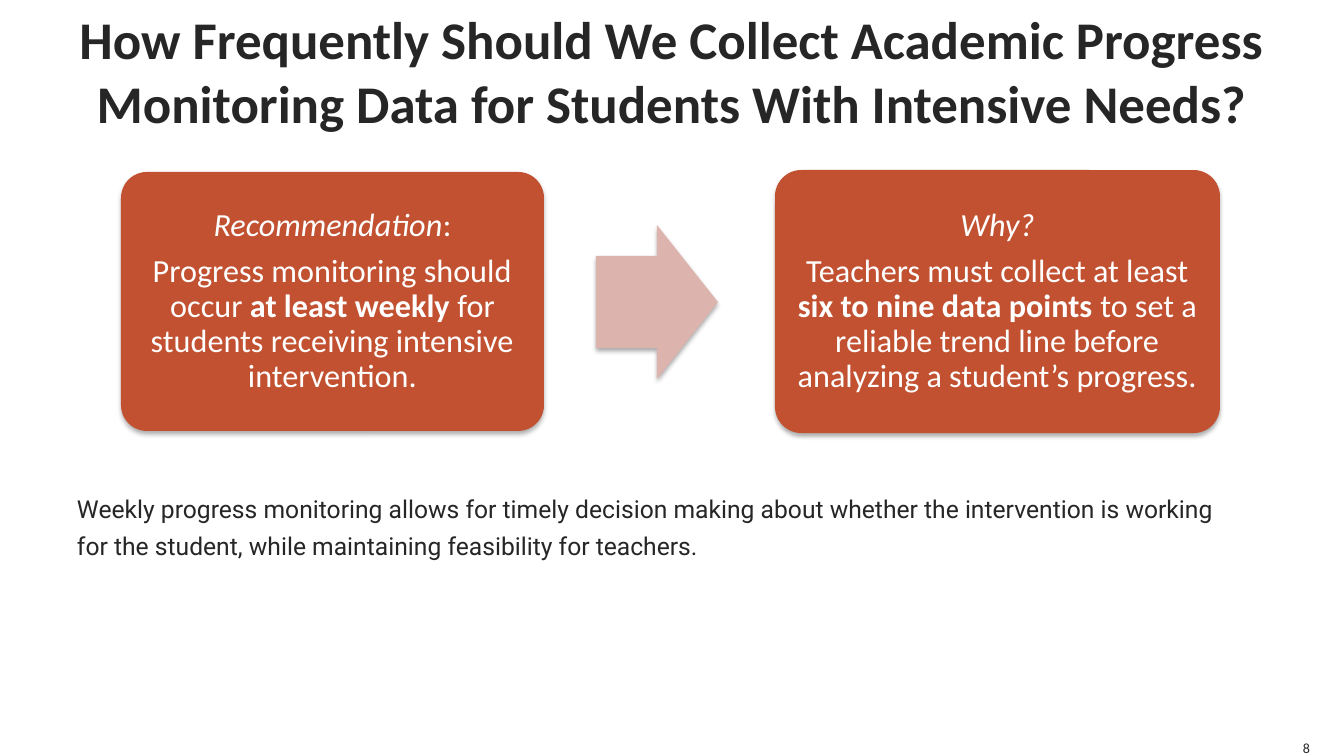
"""Build a slide on how often to collect academic progress monitoring data."""
from dataclasses import dataclass

from lxml import etree
from pptx import Presentation
from pptx.dml.color import RGBColor
from pptx.enum.shapes import MSO_SHAPE
from pptx.enum.text import MSO_ANCHOR, MSO_AUTO_SIZE, PP_ALIGN
from pptx.oxml.ns import qn
from pptx.util import Emu, Pt

LEFT, CENTER, RIGHT = PP_ALIGN.LEFT, PP_ALIGN.CENTER, PP_ALIGN.RIGHT
MIDDLE, BOTTOM = MSO_ANCHOR.MIDDLE, MSO_ANCHOR.BOTTOM
ROUNDED, ARROW = MSO_SHAPE.ROUNDED_RECTANGLE, MSO_SHAPE.RIGHT_ARROW

TITLE = ("How Frequently Should We Collect Academic Progress Monitoring Data "
         "for Students With Intensive Needs?")
SUMMARY = ("Weekly progress monitoring allows for timely decision making about whether "
           "the intervention is working for the student, while maintaining feasibility "
           "for teachers.")
PAGE_NUMBER = "8"
CARDS = [
    ((121, 172, 423, 259), [
        [("Recommendation", "i"), (":", "")],
        [("Progress monitoring should occur ", ""), ("at least weekly", "b"),
         (" for students receiving intensive intervention.", "")],
    ]),
    ((775, 170, 445, 263), [
        [("Why?", "i")],
        [("Teachers must collect at least", ""), ("\n", ""),
         ("six to nine data points ", "b"),
         ("to set a reliable trend line before analyzing a student’s progress.", "")],
    ]),
]
ARROW_BOX = (596, 225, 122, 154)
TITLE_BOX = (50, 0, 1243, 141)
SUMMARY_BOX = (77, 453, 1143, 141)
NUMBER_BOX = (1293, 739, 17, 17)
SLIDE_SIZE = (1344, 756)
CARD_INSET = 10
EMU_PER_PX = 914400 / 100.8


@dataclass(frozen=True)
class Theme:
    ink: str = "262626"
    card: str = "C25131"
    arrow: str = "DDB3AE"
    on_card: str = "FFFFFF"
    shadow: str = "000000"
    heading_font: str = "Calibri"
    body_font: str = "Roboto"
    title_size: float = 37.8
    card_size: float = 23
    summary_size: float = 17.6
    number_size: float = 10


THEME = Theme()


def px(length):
    return Emu(round(length * EMU_PER_PX))


def place(part, box):
    part.left, part.top, part.width, part.height = map(px, box)


def write(part, paragraphs, *, size, font=THEME.heading_font, color=THEME.ink,
          align=CENTER, anchor=MIDDLE, inset=0, spacing=1.0, after=0, bold=False):
    if isinstance(paragraphs, str):
        paragraphs = [[(paragraphs, "b" if bold else "")]]
    frame = part.text_frame
    frame.word_wrap = True
    frame.auto_size = MSO_AUTO_SIZE.NONE
    frame.vertical_anchor = anchor
    frame.margin_left = frame.margin_right = px(inset)
    frame.margin_top = frame.margin_bottom = px(inset)
    for index, runs in enumerate(paragraphs):
        paragraph = frame.add_paragraph() if index else frame.paragraphs[0]
        properties = paragraph._p.get_or_add_pPr()
        properties.set("marL", "0")
        properties.set("indent", "0")
        etree.SubElement(properties, qn("a:buNone"))
        paragraph.alignment = align
        paragraph.line_spacing = spacing
        paragraph.space_before = Pt(0)
        paragraph.space_after = Pt(after)
        for text, style in runs:
            if text == "\n":
                paragraph.add_line_break()
                continue
            run = paragraph.add_run()
            run.text = text
            run.font.name = font
            run.font.size = Pt(size)
            run.font.color.rgb = RGBColor.from_string(color)
            run.font.bold = style == "b"
            run.font.italic = style == "i"


def add_raised(slide, preset, box, fill, adjustments):
    part = slide.shapes.add_shape(preset, *map(px, box))
    for index, value in enumerate(adjustments):
        part.adjustments[index] = value
    part.fill.solid()
    part.fill.fore_color.rgb = RGBColor.from_string(fill)
    part.line.fill.background()
    part.shadow.inherit = False
    effects = part._element.spPr.find(qn("a:effectLst"))
    shadow = etree.SubElement(effects, qn("a:outerShdw"), blurRad=str(Pt(3.5)),
                              dist=str(Pt(2.2)), dir="5400000", rotWithShape="0")
    tint = etree.SubElement(shadow, qn("a:srgbClr"), val=THEME.shadow)
    etree.SubElement(tint, qn("a:alpha"), val="32000")
    return part


def main():
    deck = Presentation()
    deck.slide_width, deck.slide_height = map(px, SLIDE_SIZE)
    slide = deck.slides.add_slide(deck.slide_layouts[1])

    title, summary = slide.shapes.title, slide.placeholders[1]
    place(title, TITLE_BOX)
    write(title, TITLE, size=THEME.title_size, bold=True)
    place(summary, SUMMARY_BOX)
    write(summary, SUMMARY, size=THEME.summary_size, font=THEME.body_font,
          align=LEFT, spacing=1.25)

    for box, paragraphs in CARDS:
        card = add_raised(slide, ROUNDED, box, THEME.card, [0.1])
        write(card, paragraphs, size=THEME.card_size, color=THEME.on_card,
              inset=CARD_INSET, spacing=0.9, after=8)
    add_raised(slide, ARROW, ARROW_BOX, THEME.arrow, [0.6, 0.5])

    number = slide.shapes.add_textbox(*map(px, NUMBER_BOX))
    write(number, PAGE_NUMBER, size=THEME.number_size, align=RIGHT, anchor=BOTTOM)
    deck.save("out.pptx")


if __name__ == "__main__":
    main()
